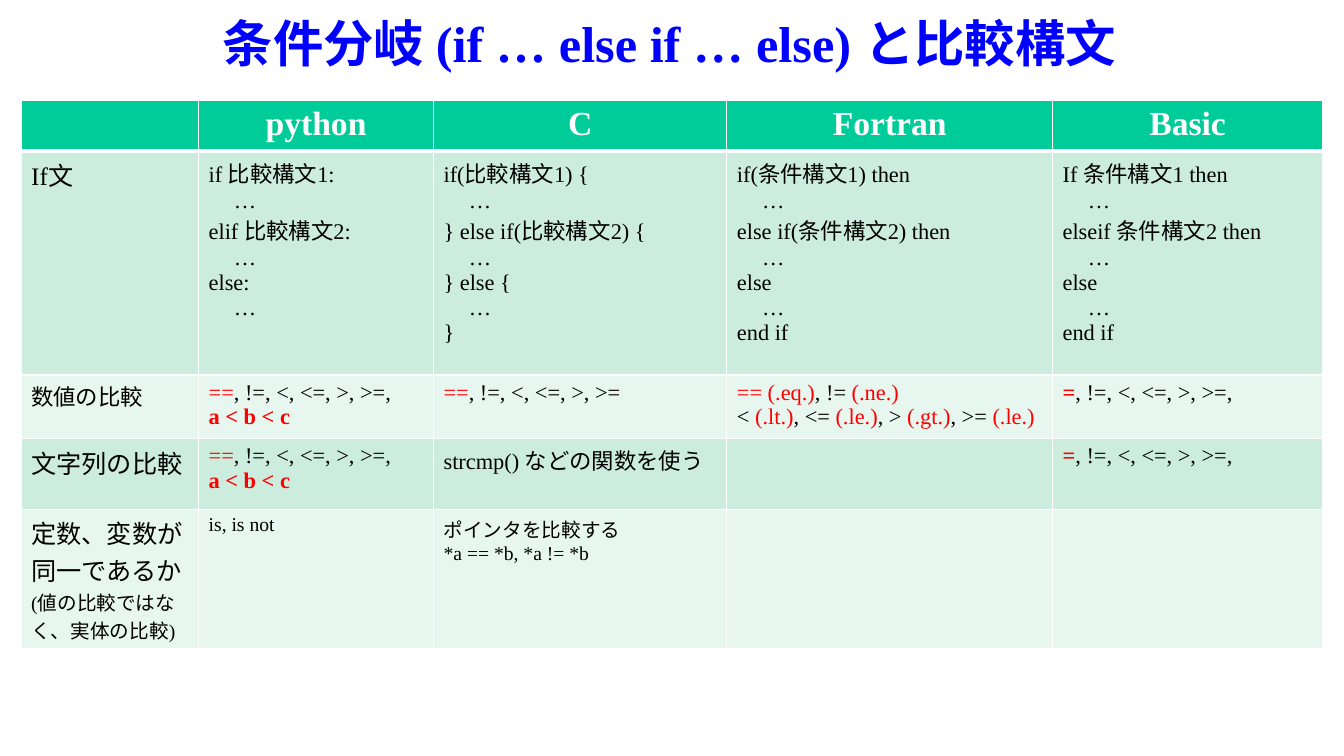
from lxml import etree
from pptx import Presentation
from pptx.dml.color import RGBColor
from pptx.enum.text import MSO_ANCHOR, PP_ALIGN
from pptx.oxml.ns import qn
from pptx.util import Inches, Pt

COLORS = {
    "title": "0000FF", "header": "00CC99", "dark_band": "CCECDE", "light_band": "E7F6EF",
    "white": "FFFFFF", "black": "000000", "red": "FF0000",
}
FONT = "Times New Roman"
SPACE_WIDTH = 0.25


def add_text(paragraph, text, size, color, bold=False):
    for index, line in enumerate(text.split("\n")):
        if index:
            paragraph.add_line_break()
        if line:
            run = paragraph.add_run()
            run.text = line
            run.font.name = FONT
            run.font.size = Pt(size)
            run.font.bold = bold
            run.font.color.rgb = RGBColor.from_string(COLORS[color])


def set_borders(cell, widths):
    properties = cell._tc.get_or_add_tcPr()
    for index, (side, width) in enumerate(widths.items()):
        line = etree.Element(qn(f"a:ln{side}"), w=str(Pt(width)))
        fill = etree.SubElement(line, qn("a:solidFill"))
        etree.SubElement(fill, qn("a:srgbClr"), val=COLORS["white"])
        properties.insert(index, line)


prs = Presentation()
prs.slide_width = Inches(13.33)
prs.slide_height = Inches(7.5)
slide = prs.slides.add_slide(prs.slide_layouts[6])

title = slide.shapes.add_textbox(Inches(0), Inches(0), Inches(13.28), Inches(0.84)).text_frame
title.word_wrap = True
title.vertical_anchor = MSO_ANCHOR.MIDDLE
title.paragraphs[0].alignment = PP_ALIGN.CENTER
add_text(title.paragraphs[0], "条件分岐 (if … else if … else) と比較構文", 36, "title", True)

languages = ["", "python", "C", "Fortran", "Basic"]
branches = [
    ["if 比較構文1:", "…", "elif 比較構文2:", "…", "else:", "…"],
    ["if(比較構文1) {", "…", "} else if(比較構文2) {", "…", "} else {", "…", "}"],
    ["if(条件構文1) then", "…", "else if(条件構文2) then", "…", "else", "…", "end if"],
    ["If 条件構文1 then", "…", "elseif 条件構文2 then", "…", "else", "…", "end if"],
]
python_operators = [("==", 16, "red"), (", !=, <, <=, >, >=,\n", 16, "black"),
                    ("a < b < c", 16, "red", True)]
c_operators = [("==", 16, "red"), (", !=, <, <=, >, >=", 16, "black")]
fortran_operators = [("== (.eq.)", 16, "red"), (", != ", 16, "black"), ("(.ne.)\n", 16, "red")]
for symbol, dotted in [("< ", "(.lt.)"), (", <= ", "(.le.)"), (", > ", "(.gt.)"), (", >= ", "(.le.)")]:
    fortran_operators += [(symbol, 16, "black"), (dotted, 16, "red")]
basic_operators = [("=", 16, "red", True), (", !=, <, <=, >, >=,", 16, "black")]

rows = [
    [[[(language, 24, "white", True)]] for language in languages],
    [[[("If文", 18, "black")]]]
    + [[[(line, 16, "black")] for line in lines] for lines in branches],
    [[[("数値の比較", 16, "black")]], [python_operators], [c_operators],
     [fortran_operators], [basic_operators]],
    [[[("文字列の比較", 18, "black")]], [python_operators],
     [[("strcmp() などの関数を使う", 16, "black")]], [[]], [basic_operators]],
    [[[("定数、変数が\n同一であるか\n", 18, "black"),
       ("(値の比較ではなく、実体の比較)", 14, "black")]],
     [[("is, is not", 14, "black")]],
     [[("ポインタを比較する\n*a == *b, *a != *b", 14, "black")]], [[]], [[]]],
]
column_widths = [1.76, 2.33, 2.91, 3.23, 2.68]
row_heights = [0.47, 2.22, 0.59, 0.7, 1.38]
bands = ["header", "dark_band", "light_band", "dark_band", "light_band"]

comparison = slide.shapes.add_table(
    len(rows), len(languages), Inches(0.21), Inches(1),
    Inches(sum(column_widths)), Inches(sum(row_heights))).table
for column, width in zip(comparison.columns, column_widths):
    column.width = Inches(width)
for row, height in zip(comparison.rows, row_heights):
    row.height = Inches(height)

for row_index, row in enumerate(rows):
    for column_index, paragraphs in enumerate(row):
        cell = comparison.cell(row_index, column_index)
        cell.fill.solid()
        cell.fill.fore_color.rgb = RGBColor.from_string(COLORS[bands[row_index]])
        set_borders(cell, {"L": 1, "R": 1, "T": 3 if row_index == 1 else 1,
                           "B": 3 if row_index == 0 else 1})
        for index, runs in enumerate(paragraphs):
            frame = cell.text_frame
            paragraph = frame.add_paragraph() if index else frame.paragraphs[0]
            if row_index == 0:
                paragraph.alignment = PP_ALIGN.CENTER
            for run in runs:
                add_text(paragraph, *run)
                if run[0] == "…":
                    paragraph._p.get_or_add_pPr().set("marL", str(Inches(SPACE_WIDTH)))

prs.save("out.pptx")
